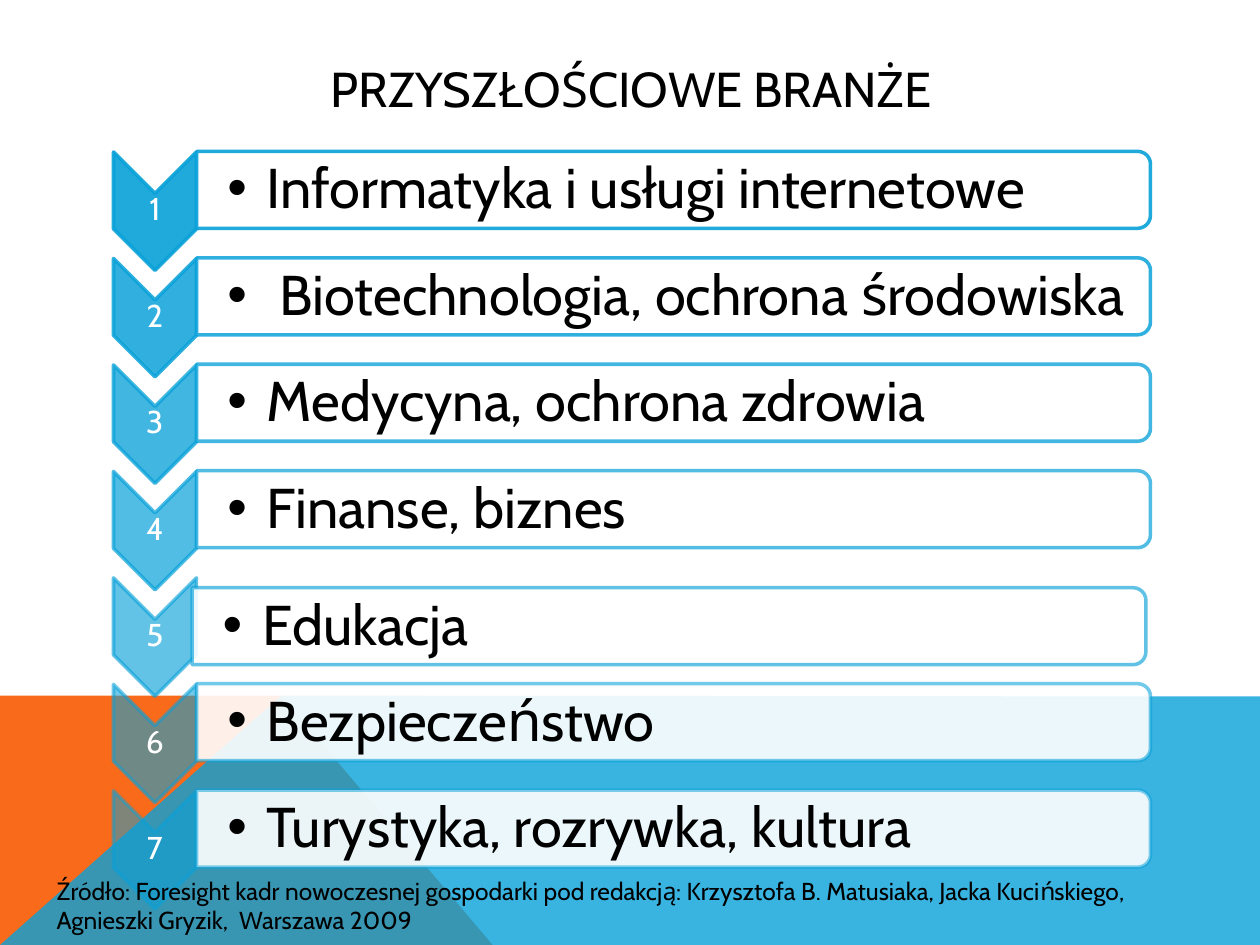
from lxml.etree import SubElement
from pptx import Presentation
from pptx.dml.color import RGBColor
from pptx.enum.shapes import MSO_SHAPE
from pptx.enum.text import MSO_ANCHOR, PP_ALIGN
from pptx.oxml.ns import qn
from pptx.util import Pt

TITLE = "PRZYSZŁOŚCIOWE BRANŻE"
INDUSTRIES = [
    "Informatyka i usługi internetowe",
    " Biotechnologia, ochrona środowiska",
    "Medycyna, ochrona zdrowia",
    "Finanse, biznes",
    "Edukacja",
    "Bezpieczeństwo",
    "Turystyka, rozrywka, kultura",
]
SOURCE = ("Źródło: Foresight kadr nowoczesnej gospodarki pod redakcją: "
          "Krzysztofa B. Matusiaka, Jacka Kucińskiego, "
          "Agnieszki Gryzik,  Warszawa 2009")

BLUE = RGBColor(0x08, 0xA1, 0xD9)
ORANGE = RGBColor(0xF9, 0x6A, 0x1B)
WHITE = RGBColor(0xFF, 0xFF, 0xFF)
BLACK = RGBColor(0x00, 0x00, 0x00)
FONT = "Cabin"

BANDS = [
    ([(0, 540), (0, 397.5), (160.8, 397.5), (281.5, 540)], ORANGE, 100),
    ([(0, 540), (160.8, 397.5), (720, 398), (720, 540)], BLUE, 80),
]
ROW_PITCH = 60.84
SHIFTED = {4: (-2.6, 6)}
NUMBER_FORMAT = {"size": 18, "color": WHITE, "align": PP_ALIGN.CENTER,
                 "insets": (0.7, 0.7, 0.7, 0.7), "spacing": 0.9}
INDUSTRY_FORMAT = {"size": 32, "insets": (18, 1.5, 1.5, 1.5),
                   "spacing": 0.9, "bullet": True}


def set_alpha(fill, color, alpha):
    fill.solid()
    fill.fore_color.rgb = color
    if alpha < 100:
        clr = fill._xPr.find(qn("a:solidFill"))[0]
        SubElement(clr, qn("a:alpha")).set("val", str(round(alpha * 1000)))


def add_band(s, points, color, alpha):
    builder = s.shapes.build_freeform(Pt(points[0][0]), Pt(points[0][1]))
    builder.add_line_segments([(Pt(x), Pt(y)) for x, y in points[1:]])
    sp = builder.convert_to_shape()
    sp.shadow.inherit = False
    set_alpha(sp.fill, color, alpha)
    sp.line.fill.background()


def add_turned(s, kind, box, color, alpha, line_alpha):
    sp = s.shapes.add_shape(kind, *map(Pt, box))
    sp.rotation = 90
    sp.shadow.inherit = False
    set_alpha(sp.fill, color, alpha)
    set_alpha(sp.line.fill, BLUE, line_alpha)
    sp.line.width = Pt(2)


def add_text(s, text, box, size, color=BLACK, align=PP_ALIGN.LEFT,
             anchor=MSO_ANCHOR.MIDDLE, insets=(7.2, 3.6, 7.2, 3.6),
             spacing=None, bullet=False):
    tf = s.shapes.add_textbox(*map(Pt, box)).text_frame
    frame = {"word_wrap": True, "vertical_anchor": anchor}
    sides = ("margin_left", "margin_top", "margin_right", "margin_bottom")
    frame.update(zip(sides, map(Pt, insets)))
    for name, value in frame.items():
        setattr(tf, name, value)
    p = tf.paragraphs[0]
    p.alignment = align
    p.line_spacing = spacing
    if bullet:
        p.level = 1
        pPr = p._p.get_or_add_pPr()
        pPr.set("marL", str(Pt(22.5)))
        pPr.set("indent", str(-Pt(22.5)))
        SubElement(pPr, qn("a:buFont")).set("typeface", "Arial")
        SubElement(pPr, qn("a:buChar")).set("char", "•")
    r = p.add_run()
    r.text = text
    for name, value in {"name": FONT, "size": Pt(size)}.items():
        setattr(r.font, name, value)
    r.font.color.rgb = color


def add_row(s, i, industry):
    y = i * ROW_PITCH
    dx, dy = SHIFTED.get(i, (0, 0))
    alpha = 90 - 40 * i / (len(INDUSTRIES) - 1)
    add_turned(s, MSO_SHAPE.CHEVRON, (54.7, 97 + y, 67.7, 47.4),
               BLUE, alpha, alpha)
    add_text(s, str(i + 1), (64.8, 110.3 + y, 47.4, 20.3), **NUMBER_FORMAT)
    add_turned(s, MSO_SHAPE.ROUND_2_SAME_RECTANGLE,
               (362.9 + dx, -164 + y + dy, 44, 545), WHITE, 90, alpha)
    add_text(s, industry, (111.9 + dx, 89 + y + dy, 543, 39.7),
             **INDUSTRY_FORMAT)


def main():
    prs = Presentation()
    prs.slide_width, prs.slide_height = Pt(720), Pt(540)
    s = prs.slides.add_slide(prs.slide_layouts[6])
    for points, color, alpha in BANDS:
        add_band(s, points, color, alpha)
    add_text(s, TITLE, (64.8, 28.8, 592, 43.2), 28, align=PP_ALIGN.CENTER)
    for i, industry in enumerate(INDUSTRIES):
        add_row(s, i, industry)
    add_text(s, SOURCE, (25.2, 497, 680, 64), 14, anchor=MSO_ANCHOR.TOP)
    prs.save("out.pptx")


if __name__ == "__main__":
    main()
